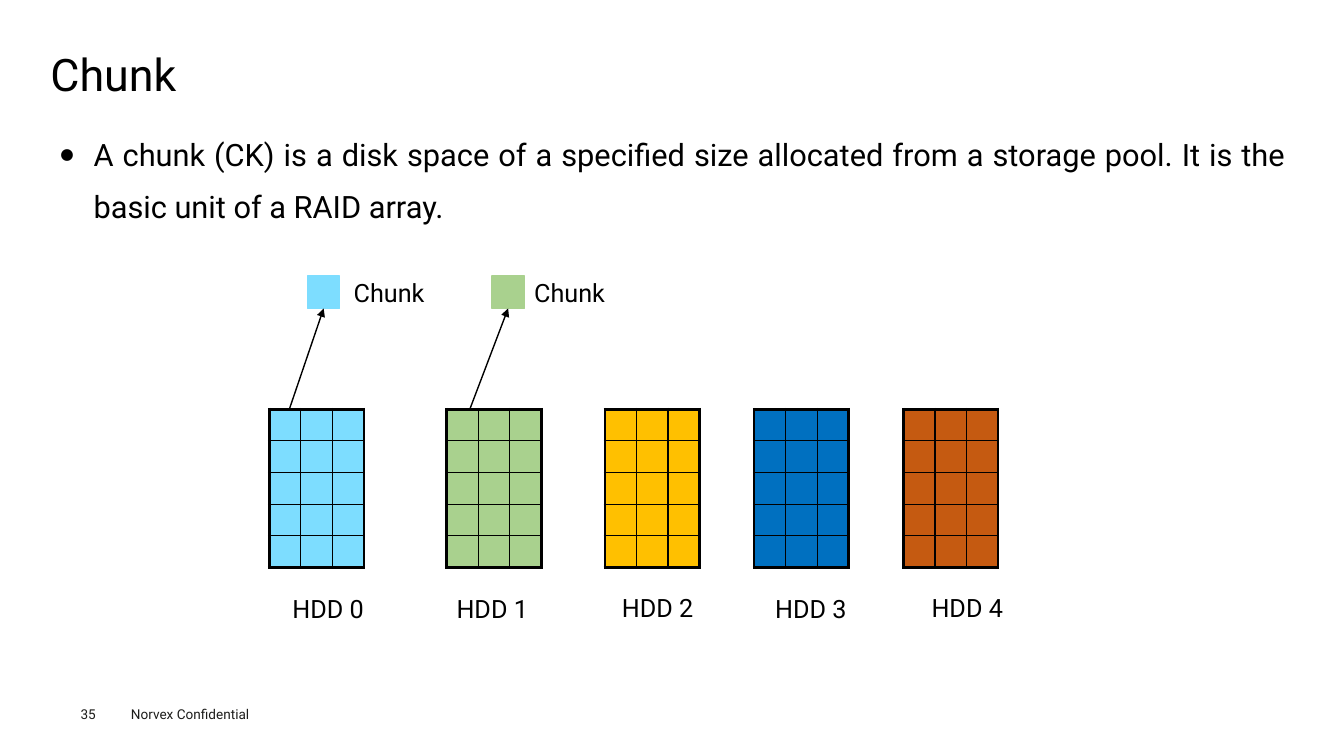
"""Build a slide that shows how chunks are taken from the disks of a storage pool."""
import pptx
import pptx.util
import pptx.dml.color
import pptx.enum.text
import pptx.enum.shapes
import pptx.oxml.ns
from lxml import etree

ANCHOR = pptx.enum.text.MSO_ANCHOR
ALIGN = pptx.enum.text.PP_ALIGN
SHAPE = pptx.enum.shapes.MSO_SHAPE
LINE = pptx.enum.shapes.MSO_CONNECTOR

SIZE = (13.33, 7.5)
TITLE = "Chunk"
BODY = ("A chunk (CK) is a disk space of a specified size allocated from a "
        "storage pool. It is the basic unit of a RAID array.")
NUMBER, FOOTER = "35", "Norvex Confidential"
DISKS = [
    {"name": "HDD 0", "fill": "7DDDFF", "left": 20.03, "label": (21.01, 77.87)},
    {"name": "HDD 1", "fill": "A9D18E", "left": 33.23, "label": (33.23, 77.87)},
    {"name": "HDD 2", "fill": "FFC000", "left": 45.01, "label": (45.54, 77.73)},
    {"name": "HDD 3", "fill": "0070C0", "left": 56.11, "label": (56.94, 77.87)},
    {"name": "HDD 4", "fill": "C55A11", "left": 67.22, "label": (68.57, 77.73)},
]
CHUNKS = [
    {"name": "Chunk", "disk": 0, "left": 22.88, "label": 25.58, "start": 21.53},
    {"name": "Chunk", "disk": 1, "left": 36.61, "label": 39.01, "start": 34.96},
]
ROWS, COLS = 5, 3
DISK_TOP, DISK_W, DISK_H = 54.13, 7.05, 20.93
CHUNK_TOP, CHUNK_W, CHUNK_H = 36.53, 2.4, 4.27
THEME = {"font": "Roboto", "ink": "000000", "grey": "1D1D1B", "title": 32,
         "body": 22, "label": 18, "foot": 9.7, "thin": 1, "thick": 2.25}
FLAT = {"margin_left": 0, "margin_right": 0, "margin_top": 0, "margin_bottom": 0}


def put(item, values):
    for key, value in values.items():
        setattr(item, key, value)


def color(code):
    return pptx.dml.color.RGBColor.from_string(code)


def share(*parts):
    return [pptx.util.Inches(SIZE[i % 2] * part / 100)
            for i, part in enumerate(parts)]


def add(parent, tag, **values):
    return etree.SubElement(parent, pptx.oxml.ns.qn(tag), values)


def write(slide, text, place, size, ink="ink", frame=None, para=None, bullet=False):
    box = slide.shapes.add_textbox(*share(*place)).text_frame
    put(box, {"word_wrap": True, **(frame or {})})
    line = box.paragraphs[0]
    if bullet:
        props = line._p.get_or_add_pPr()
        put_in = str(pptx.util.Inches(0.33))
        props.set("marL", put_in)
        props.set("indent", "-" + put_in)
    put(line, para or {})
    if bullet:
        add(props, "a:buSzPct", val="50000")
        add(props, "a:buFont", typeface=THEME["font"])
        add(props, "a:buChar", char="●")
    run = line.add_run()
    run.text = text
    put(run.font, {"name": THEME["font"], "size": pptx.util.Pt(THEME[size])})
    run.font.color.rgb = color(THEME[ink])


def edge(cell, sides):
    props = cell._tc.get_or_add_tcPr()
    for tag, outer in sides.items():
        width = THEME["thick" if outer else "thin"]
        line = add(props, tag, w=str(pptx.util.Pt(width)))
        add(add(line, "a:solidFill"), "a:srgbClr", val=THEME["ink"])


def draw_disk(slide, disk):
    place = share(disk["left"], DISK_TOP, DISK_W, DISK_H)
    table = slide.shapes.add_table(ROWS, COLS, *place).table
    put(table, {"first_row": False, "horz_banding": False})
    for row in range(ROWS):
        for col in range(COLS):
            cell = table.cell(row, col)
            put(cell, FLAT)
            edge(cell, {"a:lnL": col == 0, "a:lnR": col == COLS - 1,
                        "a:lnT": row == 0, "a:lnB": row == ROWS - 1})
            cell.fill.solid()
            cell.fill.fore_color.rgb = color(disk["fill"])
            add(cell.text_frame.paragraphs[0]._p, "a:endParaRPr", sz="800")
    write(slide, disk["name"], (*disk["label"], 7.35, 5.33), "label",
          frame={"word_wrap": False})


def draw_chunk(slide, chunk):
    tint = color(DISKS[chunk["disk"]]["fill"])
    place = share(chunk["left"], CHUNK_TOP, CHUNK_W, CHUNK_H)
    block = slide.shapes.add_shape(SHAPE.RECTANGLE, *place)
    block.shadow.inherit = False
    for fill in (block.fill, block.line.fill):
        fill.solid()
        fill.fore_color.rgb = tint
    block.line.width = pptx.util.Pt(THEME["thin"])
    write(slide, chunk["name"], (chunk["label"], 36, 6.98, 5.33), "label",
          frame={"word_wrap": False})
    ends = share(chunk["start"], DISK_TOP,
                 chunk["left"] + CHUNK_W / 2, CHUNK_TOP + CHUNK_H)
    arrow = slide.shapes.add_connector(LINE.STRAIGHT, *ends)
    arrow.line.color.rgb = color(THEME["ink"])
    arrow.line.width = pptx.util.Pt(THEME["thin"])
    add(arrow.line._get_or_add_ln(), "a:tailEnd", type="triangle")
    add(arrow._element.spPr, "a:effectLst")


def main():
    deck = pptx.Presentation()
    wide, high = map(pptx.util.Inches, SIZE)
    put(deck, {"slide_width": wide, "slide_height": high})
    slide = deck.slides.add_slide(deck.slide_layouts[6])
    write(slide, FOOTER, (9, 92.67, 12, 3.6), "foot", "grey")
    write(slide, NUMBER, (6, 93.33, 4.13, 2.13), "foot", "grey", FLAT)
    write(slide, TITLE, (3.75, 6.53, 92.65, 7.2), "title",
          frame={**FLAT, "vertical_anchor": ANCHOR.MIDDLE},
          para={"line_spacing": 0.9})
    write(slide, BODY, (3.75, 15.33, 92.65, 71.07), "body",
          para={"alignment": ALIGN.JUSTIFY, "line_spacing": 1.4}, bullet=True)
    for disk in DISKS:
        draw_disk(slide, disk)
    for chunk in CHUNKS:
        draw_chunk(slide, chunk)
    deck.save("out.pptx")


if __name__ == "__main__":
    main()
